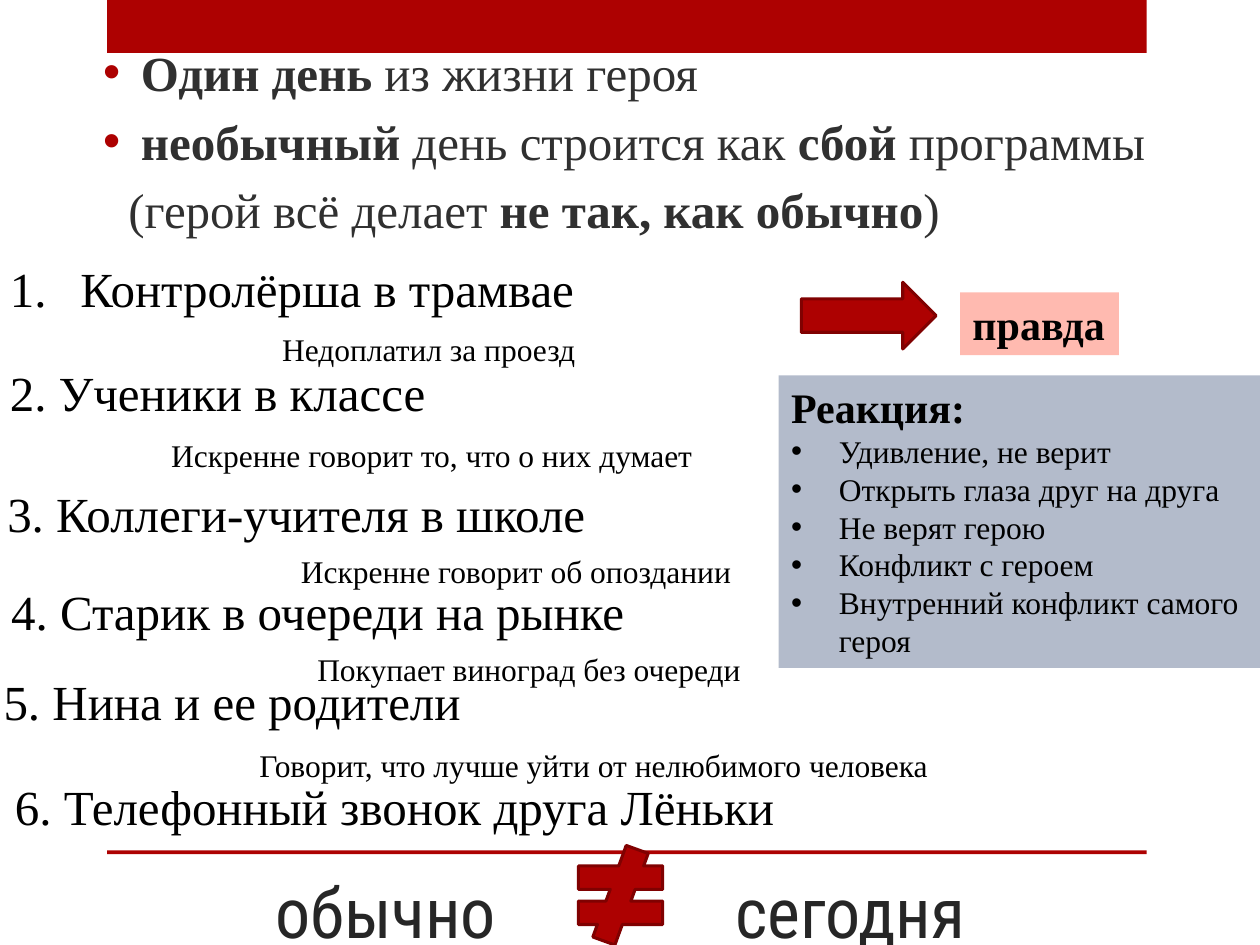
from dataclasses import dataclass
from typing import NamedTuple

from lxml import etree
from pptx import Presentation
from pptx import util as u
from pptx.dml.color import RGBColor
from pptx.enum import shapes, text
from pptx.oxml import ns

# The slide is a grid of 100 columns by 75 rows
COLS, ROWS = 100, 75
CELL = u.Inches(0.1)


@dataclass(frozen=True)
class Theme:
    red: str = "AD0101"
    edge: str = "800101"
    pink: str = "FFBAB0"
    blue: str = "B3BBCB"
    black: str = "000000"
    grey: str = "303030"
    dark: str = "262626"
    serif: str = "Times New Roman"
    sans: str = "Roboto Condensed"
    note: int = 18
    head: int = 24
    main: int = 28
    title: int = 40


class Area(NamedTuple):
    col: float
    row: float
    wide: float
    high: float


class Run(NamedTuple):
    words: str
    bold: bool = False


class Step(NamedTuple):
    """A numbered stop in the plot and the note below it."""
    words: str
    place: Area
    note: str = ""
    spot: Area | None = None


T = Theme()
Kind = shapes.MSO_SHAPE
Anchor = text.MSO_ANCHOR
Align = text.PP_ALIGN


def scale(area: Area) -> list[int]:
    return [round(n * CELL) for n in area]


def draw(slide, kind, area: Area, fill: str, edge: str = ""):
    shape = slide.shapes.add_shape(kind, *scale(area))
    shape.shadow.inherit = False
    shape.fill.solid()
    shape.fill.fore_color.rgb = RGBColor.from_string(fill)
    if edge:
        shape.line.color.rgb = RGBColor.from_string(edge)
        shape.line.width = u.Pt(1.75)
    else:
        shape.line.fill.background()
    return shape


def write(par, runs: list[Run], size: int, color: str = T.black,
          face: str = T.serif, align=Align.LEFT) -> None:
    for run in runs:
        part = par.add_run()
        part.text = run.words
        if len(runs) > 1:
            part.font.bold = run.bold
    font = par.font
    font.name, font.size = face, u.Pt(size)
    font.color.rgb = RGBColor.from_string(color)
    if len(runs) == 1:
        font.bold = runs[0].bold
    par.alignment = align


def indent(par, left: float, hang: float = 0) -> None:
    props = par._p.get_or_add_pPr()
    props.set("marL", str(round(left * CELL)))
    props.set("indent", str(round(-hang * CELL)))


def mark(par, hang: float, color: str = "", sign: str = "•") -> None:
    """Hang a bullet, or a number when no sign is given."""
    indent(par, hang, hang)
    props = par._p.get_or_add_pPr()
    if color:
        tint = etree.SubElement(props, ns.qn("a:buClr"))
        etree.SubElement(tint, ns.qn("a:srgbClr"), val=color)
    if sign:
        etree.SubElement(props, ns.qn("a:buFont"), typeface="Arial")
        etree.SubElement(props, ns.qn("a:buChar"), char=sign)
    else:
        etree.SubElement(props, ns.qn("a:buAutoNum"), type="arabicPeriod")


def label(slide, words: str, area: Area, size: int, color: str = T.black,
          face: str = T.serif, align=Align.LEFT, anchor=Anchor.TOP):
    frame = slide.shapes.add_textbox(*scale(area)).text_frame
    frame.word_wrap = False
    frame.vertical_anchor = anchor
    write(frame.paragraphs[0], [Run(words)], size, color, face, align)
    return frame.paragraphs[0]


INTRO = [
    [Run("Один день ", True), Run("из жизни героя")],
    [Run("необычный", True), Run(" день строится как "),
     Run("сбой", True), Run(" программы")],
    [Run("(герой всё делает "), Run("не так, как обычно", True), Run(")")],
]

STEPS = [
    Step("Контролёрша в трамвае", Area(-0.2, 20, 47.3, 5.7),
         "Недоплатил за проезд", Area(21.4, 25.7, 25.5, 4)),
    Step("2. Ученики в классе", Area(-0.2, 28.3, 35.4, 5.7),
         "Искренне говорит то, что о них думает", Area(12.6, 34.1, 45.1, 4)),
    Step("3. Коллеги-учителя в школе", Area(-0.4, 37.9, 48.4, 5.7),
         "Искренне говорит об опоздании", Area(22.9, 43.3, 36.5, 4)),
    Step("4. Старик в очереди на рынке", Area(-0.1, 45.7, 51.2, 5.7),
         "Покупает виноград без очереди", Area(24.2, 51.1, 36, 4)),
    Step("5. Нина и ее родители", Area(-0.7, 52.8, 38.7, 5.7),
         "Говорит, что лучше уйти от нелюбимого человека",
         Area(19.6, 58.7, 56.2, 4)),
    Step("6. Телефонный звонок друга Лёньки", Area(0.2, 61.1, 64.9, 5.7)),
]

REPLIES = ["Удивление, не верит", "Открыть глаза друг на друга",
           "Не верят герою", "Конфликт с героем",
           "Внутренний конфликт самого героя"]


def main() -> None:
    deck = Presentation()
    deck.slide_width, deck.slide_height = COLS * CELL, ROWS * CELL
    slide = deck.slides.add_slide(deck.slide_layouts[6])

    # Top band and bottom rule
    for row, high in ((0, 4.2), (67.5, 0.3)):
        draw(slide, Kind.RECTANGLE, Area(8.5, row, 82.5, high), T.red)

    # Two halves of the closing line
    for words, col in (("обычно", 17.6), ("сегодня", 54.5)):
        label(slide, words, Area(col, 68, 26, 8.1), T.title, T.dark,
              T.sans, Align.CENTER, Anchor.BOTTOM)

    # Opening points; the last one has no bullet
    frame = slide.shapes.add_textbox(*scale(Area(7.2, 6, 89.2, 10.3))).text_frame
    frame.word_wrap = True
    frame.vertical_anchor = Anchor.MIDDLE
    for i, runs in enumerate(INTRO):
        par = frame.add_paragraph() if i else frame.paragraphs[0]
        write(par, runs, T.main, T.grey)
        par.space_before = u.Pt(5.6)
        if i < len(INTRO) - 1:
            mark(par, 3, T.red)
        else:
            indent(par, 2)

    # Reaction panel
    panel = draw(slide, Kind.RECTANGLE, Area(61.8, 29.8, 38.2, 23.2), T.blue)
    frame = panel.text_frame
    frame.word_wrap = True
    frame.vertical_anchor = Anchor.TOP
    write(frame.paragraphs[0], [Run("Реакция:", True)], T.head)
    for words in REPLIES:
        par = frame.add_paragraph()
        write(par, [Run(words)], T.note)
        mark(par, 3.8)

    # Steps with their notes
    for i, step in enumerate(STEPS):
        par = label(slide, step.words, step.place, T.main)
        if i == 0:
            mark(par, 5.6, sign="")
        if step.spot:
            label(slide, step.note, step.spot, T.note)

    # Arrow to the truth, and the unequal sign
    draw(slide, Kind.RIGHT_ARROW, Area(63.6, 22.4, 10.7, 5.3), T.red, T.edge)
    draw(slide, Kind.MATH_NOT_EQUAL, Area(44.7, 67.1, 9.1, 7.9), T.red, T.edge)
    truth = draw(slide, Kind.RECTANGLE, Area(76.2, 23.2, 12.6, 5), T.pink)
    truth.text_frame.word_wrap = False
    truth.text_frame.vertical_anchor = Anchor.TOP
    write(truth.text_frame.paragraphs[0], [Run("правда", True)], T.head)

    deck.save("out.pptx")


if __name__ == "__main__":
    main()
